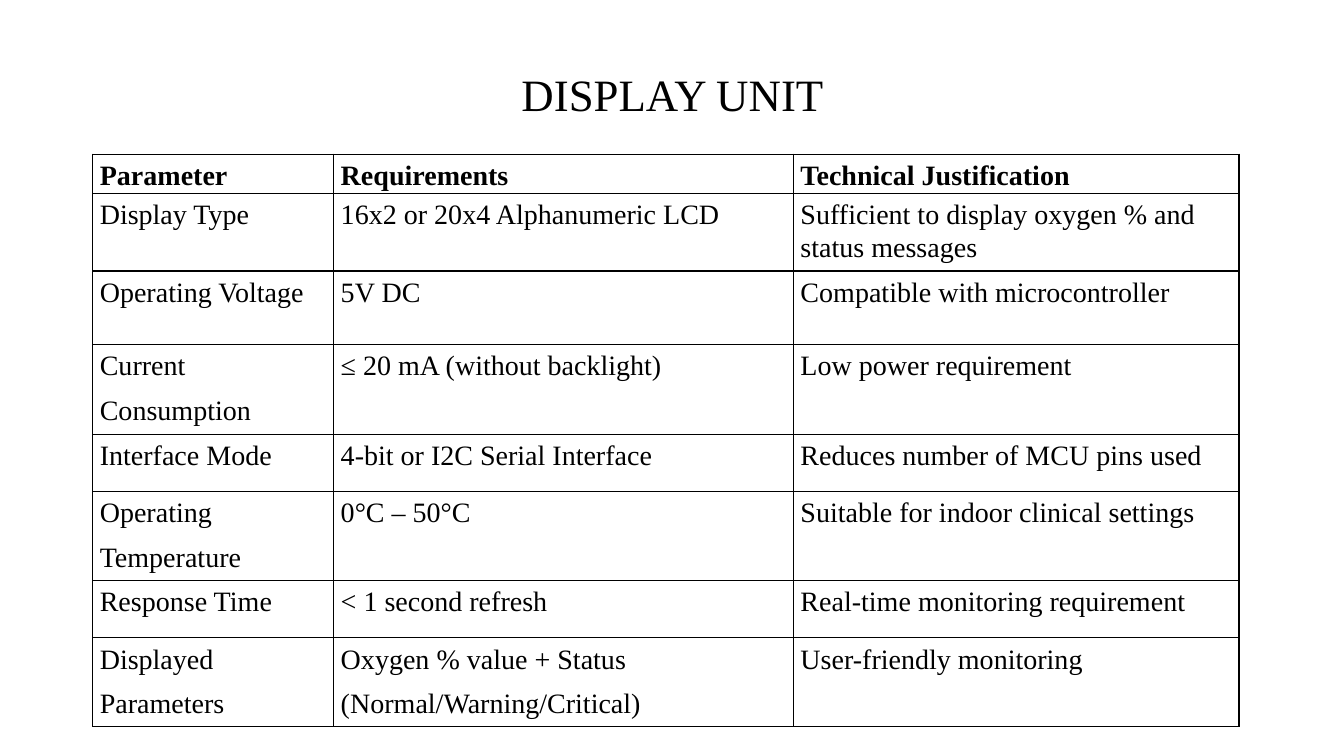
from lxml import etree
from pptx import Presentation, util as u
from pptx.dml.color import RGBColor
from pptx.enum import text
from pptx.oxml import ns

PX = 9144  # EMU per px, 100 px to the inch
FONT = "Times New Roman"
INK = "000000"


def write(para, words, size, bold=False):
    run = para.add_run()
    run.text = words
    run.font.name = FONT
    run.font.size = u.Pt(size)
    run.font.bold = bold
    run.font.color.rgb = RGBColor.from_string(INK)


def frame(cell):
    """Draw a thin line on all four sides of the cell."""
    props = cell._tc.get_or_add_tcPr()
    for side in ("lnL", "lnR", "lnT", "lnB"):
        line = etree.SubElement(props, ns.qn(f"a:{side}"), w=str(u.Pt(1)))
        fill = etree.SubElement(line, ns.qn("a:solidFill"))
        etree.SubElement(fill, ns.qn("a:srgbClr"), val=INK)


prs = Presentation()
prs.slide_width, prs.slide_height = 1333 * PX, 750 * PX
slide = prs.slides.add_slide(prs.slide_layouts[5])

title = slide.shapes.title
title.left, title.top, title.width, title.height = [n * PX for n in (92, 40, 1150, 113)]
title.text_frame.vertical_anchor = text.MSO_ANCHOR.MIDDLE
para = title.text_frame.paragraphs[0]
para.alignment = text.PP_ALIGN.CENTER
para.line_spacing = 0.9
write(para, "DISPLAY UNIT", 32)

# Row height in px, then the cells; a line break parts two paragraphs
rows = [
    (39, "Parameter", "Requirements", "Technical Justification"),
    (77, "Display Type", "16x2 or 20x4 Alphanumeric LCD",
     "Sufficient to display oxygen % and status messages"),
    (73, "Operating Voltage", "5V DC", "Compatible with microcontroller"),
    (89, "Current\nConsumption", "≤ 20 mA (without backlight)", "Low power requirement"),
    (57, "Interface Mode", "4-bit or I2C Serial Interface",
     "Reduces number of MCU pins used"),
    (88, "Operating\nTemperature", "0°C – 50°C", "Suitable for indoor clinical settings"),
    (57, "Response Time", "< 1 second refresh", "Real-time monitoring requirement"),
    (88, "Displayed\nParameters", "Oxygen % value + Status\n(Normal/Warning/Critical)",
     "User-friendly monitoring"),
]
widths = (239, 456, 442)

table = slide.shapes.add_table(
    len(rows), len(widths), 92 * PX, 153 * PX,
    sum(widths) * PX, sum(row[0] for row in rows) * PX).table
table.first_row = table.horz_banding = False
for col, width in zip(table.columns, widths):
    col.width = width * PX

for r, (height, *cells) in enumerate(rows):
    table.rows[r].height = height * PX
    for c, words in enumerate(cells):
        cell = table.cell(r, c)
        cell.margin_left, cell.margin_top = 7 * PX, 4 * PX
        cell.margin_right, cell.margin_bottom = 6 * PX, 0
        frame(cell)
        cell.fill.background()
        parts = words.split("\n")
        for i, part in enumerate(parts):
            body = cell.text_frame
            para = body.add_paragraph() if i else body.paragraphs[0]
            para.line_spacing = 1.07
            para.space_after = u.Pt(10.8 if i == len(parts) - 1 else 8)
            write(para, part, 20, bold=r == 0)

prs.save("out.pptx")
